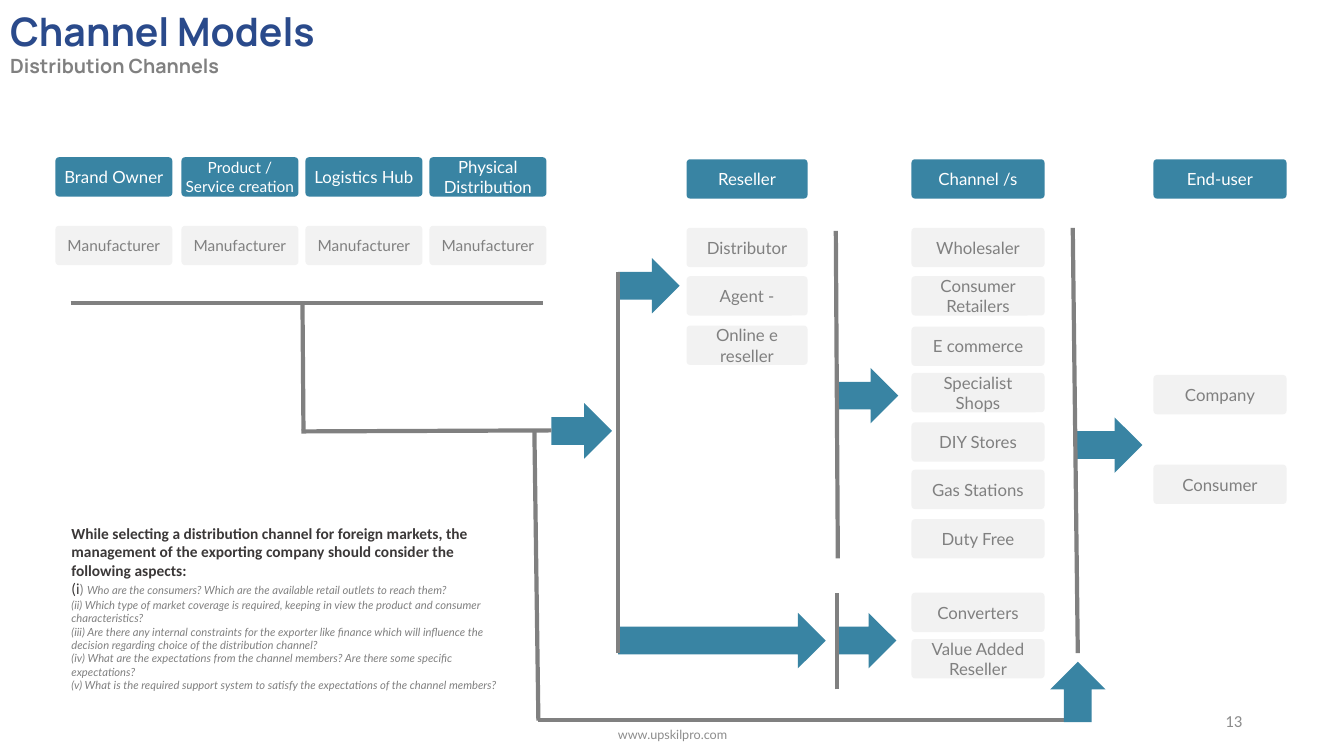
from lxml import etree
from pptx import Presentation
from pptx.dml.color import RGBColor
from pptx.enum.shapes import MSO_CONNECTOR, MSO_SHAPE
from pptx.enum.text import MSO_ANCHOR, PP_ALIGN
from pptx.oxml.ns import qn
from pptx.util import Inches, Pt

ROUNDED = MSO_SHAPE.ROUNDED_RECTANGLE
ARROW = MSO_SHAPE.RIGHT_ARROW
STRAIGHT = MSO_CONNECTOR.STRAIGHT
TOP, MIDDLE = MSO_ANCHOR.TOP, MSO_ANCHOR.MIDDLE
LEFT, CENTER, RIGHT = PP_ALIGN.LEFT, PP_ALIGN.CENTER, PP_ALIGN.RIGHT

COLORS = {
    "teal": "3984A3", "pale": "F2F2F2", "grey": "808080", "white": "FFFFFF",
    "navy": "2A4A8B", "ink": "3B3838", "footer": "8C8C8C",
}
GRID_COLUMNS, GRID_ROWS = 133.3, 75
BOX_HEIGHT, ARROW_HEIGHT = 3.9, 5.5

STAGES = [
    (5.5, 11.6, 15.6, "Brand Owner", 12),
    (18, 11.6, 15.6, "Product / Service creation", 11),
    (30.3, 11.6, 15.6, "Logistics Hub", 12),
    (42.6, 11.6, 15.6, "Physical Distribution", 12),
    (68.1, 12, 15.8, "Reseller", 12),
    (90.4, 13.2, 15.8, "Channel /s", 12),
    (114.4, 13.2, 15.8, "End-user", 12),
]
MEMBERS = {
    "Reseller": [(22.6, "Distributor"), (27.4, "Agent -"), (32.3, "Online e reseller")],
    "Channel /s": [
        (22.6, "Wholesaler"), (27.4, "Consumer Retailers"), (32.4, "E commerce"),
        (37, "Specialist Shops"), (41.9, "DIY Stores"), (46.6, "Gas Stations"),
        (51.5, "Duty Free"), (58.8, "Converters"), (63.4, "Value Added Reseller"),
    ],
    "End-user": [(37.2, "Company"), (46.1, "Consumer")],
}
MANUFACTURER = [(22.4, "Manufacturer")]
FLOWS = [
    (61.3, 60.8, 20.6), (61.3, 25.6, 6.1), (106.7, 41.4, 6.6),
    (83.1, 36.5, 6), (82.9, 60.8, 6), (54.7, 40, 6),
]
RAILS = [
    (61.3, 64.8, 61.3, 27), (106.9, 64.8, 106.4, 22.6),
    (83.1, 55.4, 82.9, 22.9), (83, 68.4, 83, 58.8),
    (30.1, 42.7, 30, 30.1), (29.9, 42.8, 54.7, 42.7),
    (7, 30.1, 53.9, 30.1), (53.4, 71.4, 106.9, 71.4),
    (53.4, 71.5, 53, 42.7),
]
ADVICE = (
    "While selecting a distribution channel for foreign markets, the management of "
    "the exporting company should consider the following aspects:"
)
FIRST_QUESTION = "Who are the consumers? Which are the available retail outlets to reach them?"
QUESTIONS = [
    "(ii) Which type of market coverage is required, keeping in view the product and "
    "consumer characteristics?",
    "(iii) Are there any internal constraints for the exporter like finance which will "
    "influence the decision regarding choice of the distribution channel?",
    "(iv) What are the expectations from the channel members? Are there some specific "
    "expectations?",
    "(v) What is the required support system to satisfy the expectations of the channel "
    "members?",
]


class ChannelSlide:
    def __init__(self, deck):
        self.slide = deck.slides.add_slide(deck.slide_layouts[5])
        self.column = deck.slide_width / GRID_COLUMNS
        self.row = deck.slide_height / GRID_ROWS

    def place(self, x, y):
        return round(x * self.column), round(y * self.row)

    def fill_text(self, frame, paragraphs, align=LEFT, anchor=TOP):
        frame.word_wrap = True
        frame.vertical_anchor = anchor
        for index, runs in enumerate(paragraphs):
            paragraph = frame.add_paragraph() if index else frame.paragraphs[0]
            paragraph.alignment = align
            for words, font, size, color, bold, italic in runs:
                run = paragraph.add_run()
                run.text = words
                run.font.name = font
                run.font.size = Pt(size)
                run.font.bold = bold
                run.font.italic = italic
                run.font.color.rgb = RGBColor.from_string(COLORS[color])

    def title(self, x, y, width, height, paragraphs):
        heading = self.slide.shapes.title
        heading.left, heading.top = self.place(x, y)
        heading.width, heading.height = self.place(width, height)
        self.fill_text(heading.text_frame, paragraphs)

    def text(self, x, y, width, height, paragraphs, align=LEFT, anchor=TOP):
        box = self.slide.shapes.add_textbox(*self.place(x, y), *self.place(width, height))
        self.fill_text(box.text_frame, paragraphs, align, anchor)

    def shape(self, kind, x, y, width, height, fill):
        figure = self.slide.shapes.add_shape(
            kind, *self.place(x, y), *self.place(width, height))
        figure.shadow.inherit = False
        figure.fill.solid()
        figure.fill.fore_color.rgb = RGBColor.from_string(COLORS[fill])
        figure.line.fill.background()
        return figure

    def box(self, x, y, width, words, size, fill, color):
        card = self.shape(ROUNDED, x, y, width, BOX_HEIGHT, fill)
        card.adjustments[0] = 0.09
        self.fill_text(card.text_frame, [[(words, "Lato", size, color, False, False)]],
                       CENTER, MIDDLE)
        return card

    def header(self, x, y, width, words, size):
        frame = self.box(x, y, width, words, size, "teal", "white").text_frame
        frame.margin_left = frame.margin_right = 0
        frame.margin_top = frame.margin_bottom = 0

    def arrow(self, x, y, width, rotation=0):
        self.shape(ARROW, x, y, width, ARROW_HEIGHT, "teal").rotation = rotation

    def rail(self, x1, y1, x2, y2):
        line = self.slide.shapes.add_connector(
            STRAIGHT, *self.place(x1, y1), *self.place(x2, y2))
        line.line.color.rgb = RGBColor.from_string(COLORS["grey"])
        line.line.width = Pt(3)
        etree.SubElement(line._element.spPr, qn("a:effectLst"))


def main():
    deck = Presentation()
    deck.slide_width, deck.slide_height = Inches(13.33), Inches(7.5)
    channels = ChannelSlide(deck)

    channels.title(0, 0.2, 62.7, 8.1, [
        [("Channel Models", "Manrope", 28, "navy", True, False)],
        [("Distribution Channels", "Manrope", 14, "grey", True, False)],
    ])

    for x, width, y, stage, size in STAGES:
        channels.header(x, y, width, stage, size)
        member_size = 12 if stage in MEMBERS else 11
        for member_y, member in MEMBERS.get(stage, MANUFACTURER):
            channels.box(x, member_y, width, member, member_size, "pale", "grey")

    for flow in FLOWS:
        channels.arrow(*flow)
    for rail in RAILS:
        channels.rail(*rail)
    channels.arrow(103.9, 65.9, 6, rotation=270)

    channels.text(6.1, 51.5, 45.5, 19.2, [
        [(ADVICE, "Calibri", 11, "ink", True, False)],
        [("(i", "Calibri", 11, "ink", False, False),
         (") ", "Calibri", 10, "grey", False, False),
         (FIRST_QUESTION, "Lato", 8, "grey", False, True)],
        *[[(question, "Lato", 8, "grey", False, True)] for question in QUESTIONS],
    ])
    channels.text(94.2, 69.5, 30, 4, [[("13", "Calibri", 12, "footer", False, False)]],
                  RIGHT, MIDDLE)
    channels.text(44.2, 70.9, 45, 4,
                  [[("www.upskilpro.com", "Lato", 9, "footer", False, False)]],
                  CENTER, MIDDLE)
    deck.save("out.pptx")


if __name__ == "__main__":
    main()
